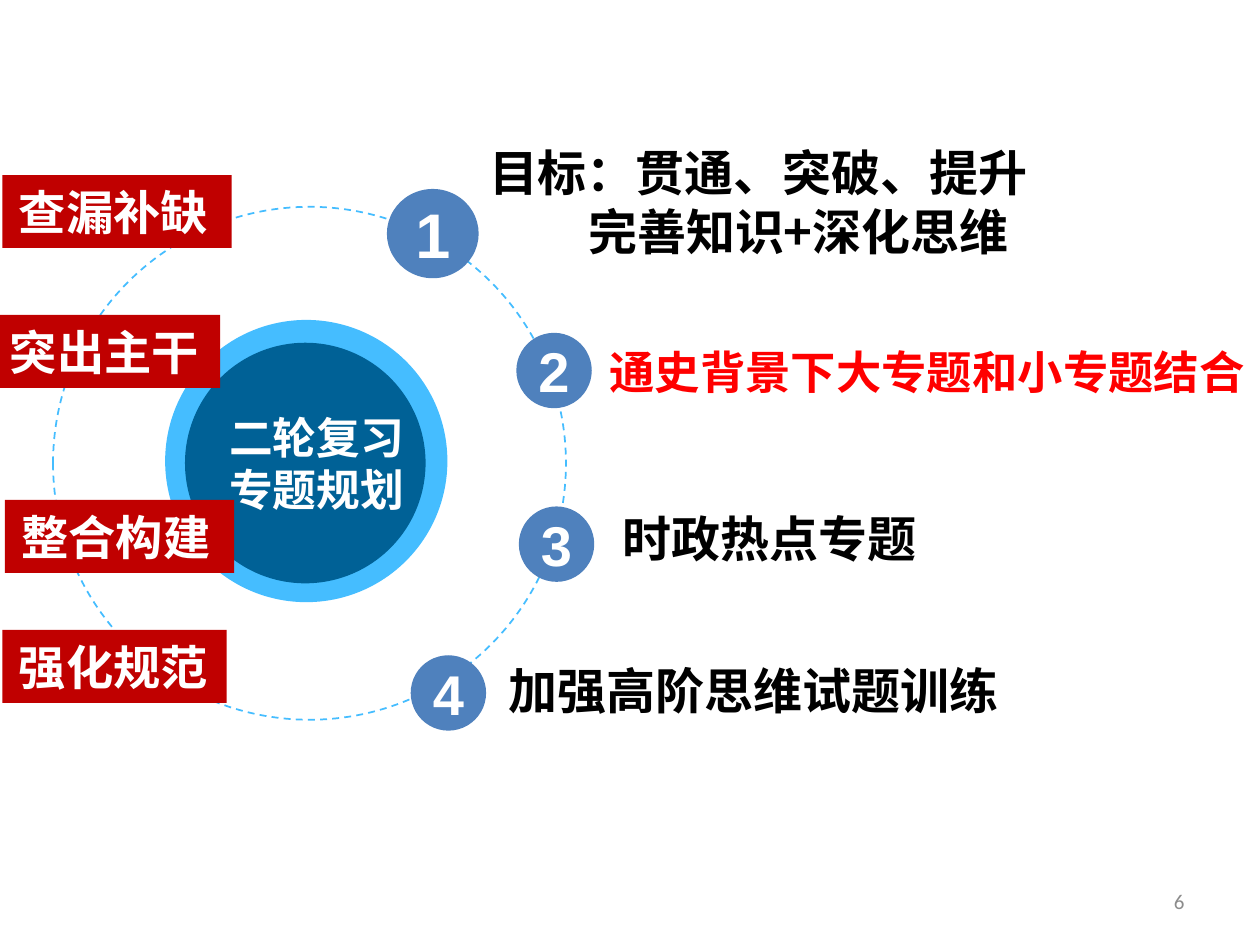
from pptx import Presentation
from pptx.dml.color import RGBColor
from pptx.enum.dml import MSO_LINE
from pptx.enum.shapes import MSO_SHAPE
from pptx.enum.text import MSO_ANCHOR, PP_ALIGN
from pptx.oxml.ns import qn
from pptx.util import Cm, Pt
from lxml import etree

OVAL, RECT = MSO_SHAPE.OVAL, MSO_SHAPE.RECTANGLE
LEFT, CENTER, RIGHT = PP_ALIGN.LEFT, PP_ALIGN.CENTER, PP_ALIGN.RIGHT
MIDDLE = MSO_ANCHOR.MIDDLE
DASH = MSO_LINE.DASH
CJK = "Noto Sans CJK SC"
BLACK, WHITE, RED = "000000", "FFFFFF", "FF0000"
SKY, NAVY, BLUE, CRIMSON, GREY = "45BDFF", "006196", "4F81BD", "C00000", "8C8C8C"


def color(hex_string):
    return RGBColor.from_string(hex_string)


def write(shape, lines, size, hex_color, font=CJK, bold=True, align=LEFT,
          inset=0, wrap=True):
    """Fill a shape with lines of text that share one style."""
    frame = shape.text_frame
    frame.word_wrap = wrap
    frame.vertical_anchor = MIDDLE
    frame.margin_left = frame.margin_right = Cm(inset)
    frame.margin_top = frame.margin_bottom = 0
    frame.text = "\n".join(lines)
    for paragraph in frame.paragraphs:
        paragraph.alignment = align
        paragraph.font.size = Pt(size)
        paragraph.font.bold = bold
        paragraph.font.name = font
        paragraph.font.color.rgb = color(hex_color)
        defaults = paragraph._p.get_or_add_pPr().get_or_add_defRPr()
        etree.SubElement(defaults, qn("a:ea")).set("typeface", CJK)
    return frame


def add_text(slide, box, lines, size, hex_color, **style):
    text_box = slide.shapes.add_textbox(*map(Cm, box))
    return write(text_box, lines, size, hex_color, **style)


def add_shape(slide, kind, box, fill=None):
    shape = slide.shapes.add_shape(kind, *map(Cm, box))
    shape.shadow.inherit = False
    shape.line.fill.background()
    if fill:
        shape.fill.solid()
        shape.fill.fore_color.rgb = color(fill)
    else:
        shape.fill.background()
    return shape


def add_hub(slide, left, top, diameter):
    """Central disc with its halo, inside the dashed orbit."""
    add_shape(slide, OVAL, (left + 2.26, top + 2.28, 5.69, 5.69), SKY)
    orbit = add_shape(slide, OVAL, (left, top, diameter, diameter))
    orbit.line.color.rgb = color(SKY)
    orbit.line.width = Pt(1)
    orbit.line.dash_style = DASH
    add_shape(slide, OVAL, (left + 2.66, top + 2.74, 4.85, 4.85), NAVY)
    add_text(slide, (left + 3.38, top + 3.45, 3.86, 3.43),
             ["二轮复习", "专题规划"], 25, WHITE, align=CENTER)


def add_topic(slide, number, badge_box, digit_size, text_box, lines, size, hex_color):
    """Numbered badge on the orbit and the topic beside it."""
    badge = add_shape(slide, OVAL, badge_box, BLUE)
    write(badge, [str(number)], digit_size, WHITE, font="Arial", align=CENTER, wrap=False)
    return add_text(slide, text_box, lines, size, hex_color)


def add_label(slide, left, top, width, caption):
    """Red label at the left edge."""
    label = add_shape(slide, RECT, (left, top, width, 1.47), CRIMSON)
    write(label, [caption], 27, WHITE, font="Arial", inset=0.33)


def main():
    presentation = Presentation()
    presentation.slide_width, presentation.slide_height = Cm(25.4), Cm(19.05)
    slide = presentation.slides.add_slide(presentation.slide_layouts[6])

    add_hub(slide, 1.07, 4.17, 10.34)

    # Topics: badge box, digit size, text box, lines, text size, colour
    topics = [
        ((7.8, 3.81, 1.85, 1.8), 36, (9.86, 2.59, 15.54, 2.95),
         ["目标：贯通、突破、提升", "完善知识+深化思维"], 28, BLACK),
        ((10.41, 6.71, 1.52, 1.52), 32, (12.29, 6.43, 12.93, 2.13),
         ["通史背景下大专题和小专题结合"], 25.9, RED),
        ((10.46, 10.21, 1.52, 1.52), 32, (12.55, 9.78, 12.42, 2.13),
         ["时政热点专题"], 28, BLACK),
        ((8.28, 13.21, 1.52, 1.52), 32, (10.26, 12.85, 12.42, 2.13),
         ["加强高阶思维试题训练"], 28, BLACK),
    ]
    frames = [add_topic(slide, number, *topic)
              for number, topic in enumerate(topics, start=1)]
    # Indent the second line of the goal under its heading
    goal_detail = frames[0].paragraphs[1]
    goal_detail._p.get_or_add_pPr().set("marL", str(Cm(2)))

    labels = [
        (0.05, 3.53, 4.62, "查漏补缺"),
        (-0.13, 6.35, 4.57, "突出主干"),
        (0.1, 10.08, 4.62, "整合构建"),
        (0.05, 12.7, 4.52, "强化规范"),
    ]
    for label in labels:
        add_label(slide, *label)

    # Slide number
    add_text(slide, (18.21, 17.65, 5.92, 1.02), ["6"], 12, GREY,
             font="Calibri", bold=False, align=RIGHT, inset=0.25)

    presentation.save("out.pptx")


if __name__ == "__main__":
    main()
